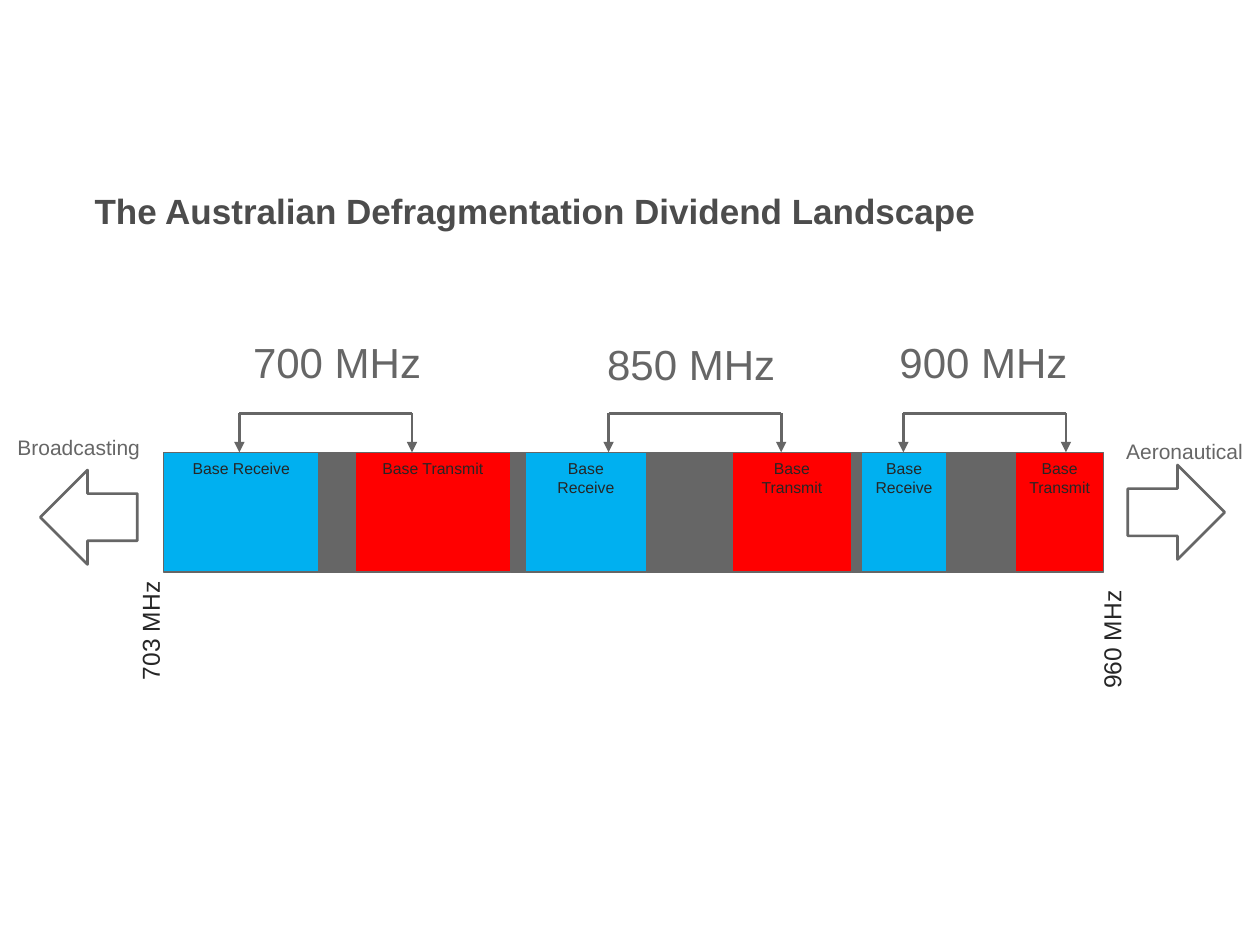
import dataclasses

import pptx
import pptx.dml.color
import pptx.enum.shapes
import pptx.enum.text
import pptx.oxml.ns
import pptx.util
from pptx.util import Inches

SHAPES = pptx.enum.shapes.MSO_SHAPE
ANCHOR = pptx.enum.text.MSO_ANCHOR
ALIGN = pptx.enum.text.PP_ALIGN
AUTO_SIZE = pptx.enum.text.MSO_AUTO_SIZE


@dataclasses.dataclass(frozen=True)
class Theme:
    font: str = "Arial"
    receive: str = "00B0F0"
    transmit: str = "FF0000"
    grey: str = "666666"
    dark: str = "262626"
    heading: str = "4C4C4C"
    title_size: int = 20
    band_size: int = 24
    limit_size: int = 14
    neighbour_size: int = 12
    block_size: int = 9
    thin: float = 0.75
    thick: float = 1.5


def rgb(value):
    return pptx.dml.color.RGBColor.from_string(value)


def apply(target, values):
    for name, value in values.items():
        setattr(target, name, value)


class SlideBuilder:
    def __init__(self, slide, theme):
        self.slide = slide
        self.theme = theme

    def set_text(self, frame, text, size, color, align=ALIGN.LEFT, bold=False):
        paragraph = frame.paragraphs[0]
        paragraph.text = text
        paragraph.alignment = align
        font = paragraph.runs[0].font
        apply(font, {"name": self.theme.font, "size": pptx.util.Pt(size), "bold": bold})
        font.color.rgb = rgb(color)

    def outline(self, line, width):
        line.color.rgb = rgb(self.theme.grey)
        line.width = pptx.util.Pt(width)

    def title(self, text, left, top, width, height):
        heading = self.slide.shapes.title
        apply(heading, {"left": Inches(left), "top": Inches(top),
                        "width": Inches(width), "height": Inches(height)})
        margins = ("margin_left", "margin_top", "margin_right", "margin_bottom")
        apply(heading.text_frame, {
            **dict.fromkeys(margins, 0),
            "auto_size": AUTO_SIZE.NONE,
            "vertical_anchor": ANCHOR.TOP,
        })
        self.set_text(heading.text_frame, text, self.theme.title_size,
                      self.theme.heading, bold=True)

    def label(self, text, left, top, width, height, size, color, rotation=0):
        box = self.slide.shapes.add_textbox(
            Inches(left), Inches(top), Inches(width), Inches(height))
        box.rotation = rotation
        apply(box.text_frame, {"word_wrap": False,
                               "auto_size": AUTO_SIZE.SHAPE_TO_FIT_TEXT})
        self.set_text(box.text_frame, text, size, color)

    def block(self, left, right, top, height, fill, text):
        block = self.slide.shapes.add_shape(
            SHAPES.RECTANGLE, Inches(left), Inches(top),
            Inches(right - left), Inches(height))
        block.shadow.inherit = False
        block.fill.solid()
        block.fill.fore_color.rgb = rgb(fill)
        self.outline(block.line, self.theme.thin)
        if text:
            block.text_frame.vertical_anchor = ANCHOR.TOP
            self.set_text(block.text_frame, text, self.theme.block_size,
                          self.theme.dark, ALIGN.CENTER)

    def line(self, x1, y1, x2, y2, arrow=False):
        connector = self.slide.shapes.add_connector(
            pptx.enum.shapes.MSO_CONNECTOR.STRAIGHT,
            Inches(x1), Inches(y1), Inches(x2), Inches(y2))
        self.outline(connector.line, self.theme.thick)
        properties = connector.element.spPr
        if arrow:
            stroke = properties.find(pptx.oxml.ns.qn("a:ln"))
            stroke.append(stroke.makeelement(
                pptx.oxml.ns.qn("a:tailEnd"), {"type": "triangle"}))
        properties.append(properties.makeelement(pptx.oxml.ns.qn("a:effectLst"), {}))

    def bracket(self, left, right, top, bottom):
        for x in (left, right):
            self.line(x, top, x, bottom, arrow=True)
        self.line(left, top, right, top)

    def arrow(self, left, top, rotation):
        arrow = self.slide.shapes.add_shape(
            SHAPES.LEFT_ARROW, Inches(left), Inches(top), Inches(0.77), Inches(0.75))
        arrow.rotation = rotation
        arrow.shadow.inherit = False
        arrow.fill.background()
        self.outline(arrow.line, self.theme.thick)


def main():
    theme = Theme()
    presentation = pptx.Presentation()
    apply(presentation, {"slide_width": Inches(10), "slide_height": Inches(7.5)})
    slide = presentation.slides.add_slide(presentation.slide_layouts[5])
    builder = SlideBuilder(slide, theme)

    builder.title("The Australian Defragmentation Dividend Landscape",
                  0.75, 1.5, 8.5, 0.5)

    spectrum_top, spectrum_height, bracket_top = 3.59, 0.95, 3.28
    edges = [1.3, 2.53, 2.82, 4.05, 4.17, 5.13, 5.81, 6.76, 6.84, 7.51, 8.06, 8.76]
    uses = [(theme.receive, "Base Receive"), (theme.grey, ""),
            (theme.transmit, "Base Transmit"), (theme.grey, "")]
    for index, (left, right) in enumerate(zip(edges, edges[1:])):
        builder.block(left, right, spectrum_top, spectrum_height,
                      *uses[index % len(uses)])

    bands = [("700 MHz", 1.91, 2.62, 1.9, 3.27),
             ("850 MHz", 4.72, 2.64, 4.83, 6.2),
             ("900 MHz", 7.04, 2.62, 7.17, 8.46)]
    for band, left, top, receive_x, transmit_x in bands:
        builder.label(band, left, top, 1.55, 0.5, theme.band_size, theme.grey)
        builder.bracket(receive_x, transmit_x, bracket_top, spectrum_top)

    for limit, left, top in [("703 MHz", 0.7, 4.83), ("960 MHz", 8.33, 4.9)]:
        builder.label(limit, left, top, 0.99, 0.34, theme.limit_size,
                      theme.dark, rotation=270)

    neighbours = [("Broadcasting", 0.04, 3.4, 1.18, 0.32, 3.73, 0),
                  ("Aeronautical", 8.84, 3.43, 1.13, 8.95, 3.69, 180)]
    for service, left, top, width, arrow_left, arrow_top, rotation in neighbours:
        builder.label(service, left, top, width, 0.3, theme.neighbour_size, theme.grey)
        builder.arrow(arrow_left, arrow_top, rotation)

    presentation.save("out.pptx")


if __name__ == "__main__":
    main()
